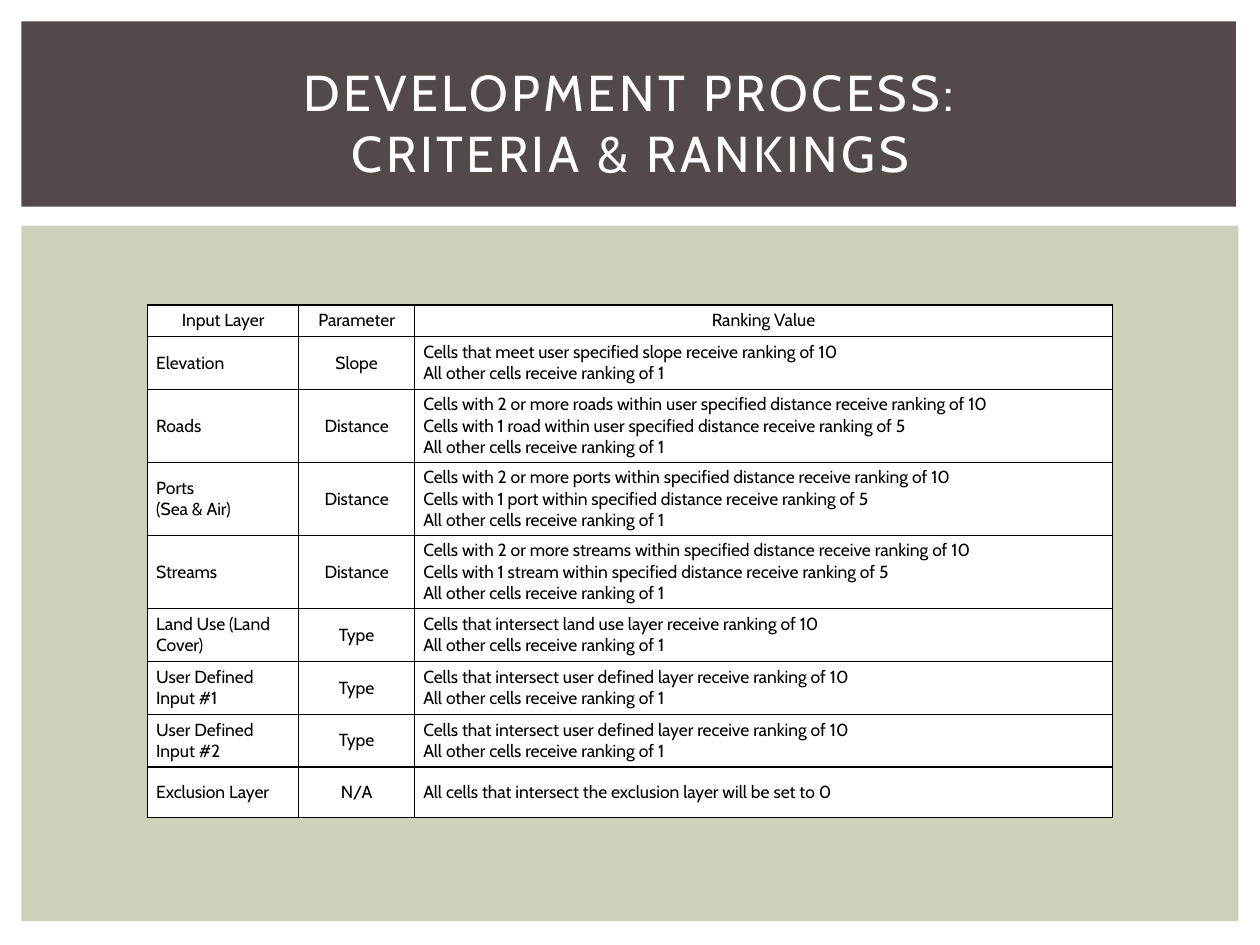
"""Build the criteria and rankings slide."""
from lxml.etree import SubElement
from pptx import Presentation
from pptx.dml.color import RGBColor
from pptx.enum.shapes import MSO_SHAPE as Preset
from pptx.enum.text import MSO_ANCHOR as Anchor, PP_ALIGN as Align
from pptx.oxml.ns import qn
from pptx.util import Inches, Pt


def colour(code):
    return RGBColor.from_string(code)


def write(frame, text, size=10, ink="000000", align=Align.LEFT, after=0, tracking=0):
    frame.word_wrap = True
    frame.vertical_anchor = Anchor.MIDDLE
    frame.text = text
    for paragraph in frame.paragraphs:
        paragraph.alignment = align
        paragraph.space_after = Pt(after)
        for run in paragraph.runs:
            run.font.size = Pt(size)
            run.font.name = "Cabin"
            run.font.color.rgb = colour(ink)
            if tracking:
                run._r.get_or_add_rPr().set("spc", str(tracking * 100))


deck = Presentation()
deck.slide_width, deck.slide_height = Inches(10), Inches(7.5)
slide = deck.slides.add_slide(deck.slide_layouts[6])

panels = [
    ((0.17, 1.79, 9.66, 5.52), "CCD1B9"),
    ((0.17, 0.17, 9.64, 1.47), "534949"),
]
for bounds, shade in panels:
    panel = slide.shapes.add_shape(Preset.RECTANGLE, *map(Inches, bounds))
    panel.shadow.inherit = False
    panel.fill.solid()
    panel.fill.fore_color.rgb = colour(shade)
    panel.line.fill.background()

OTHERS = "All other cells receive ranking of 1"
USER_LAYER = f"Cells that intersect user defined layer receive ranking of 10\n{OTHERS}"
COUNTED = (
    "Cells with 2 or more {0}s within {1}specified distance receive ranking of 10\n"
    "Cells with 1 {0} within {1}specified distance receive ranking of 5\n" + OTHERS
)
criteria = [
    (0.25, "Input Layer", "Parameter", "Ranking Value"),
    (0.42, "Elevation", "Slope", f"Cells that meet user specified slope receive ranking of 10\n{OTHERS}"),
    (0.58, "Roads", "Distance", COUNTED.format("road", "user ")),
    (0.58, "Ports\n(Sea & Air)", "Distance", COUNTED.format("port", "")),
    (0.58, "Streams", "Distance", COUNTED.format("stream", "")),
    (0.42, "Land Use (Land Cover)", "Type", f"Cells that intersect land use layer receive ranking of 10\n{OTHERS}"),
    (0.42, "User Defined Input #1", "Type", USER_LAYER),
    (0.42, "User Defined Input #2", "Type", USER_LAYER),
    (0.4, "Exclusion Layer", "N/A", "All cells that intersect the exclusion layer will be set to 0"),
]
widths = [1.2, 0.92, 5.54]
total_height = sum(height for height, *_ in criteria)
rankings = slide.shapes.add_table(
    len(criteria), len(widths), Inches(1.17), Inches(2.42), Inches(sum(widths)), Inches(total_height)
).table
rankings.first_row = rankings.horz_banding = False
for column, width in zip(rankings.columns, widths):
    column.width = Inches(width)

for row, (height, *entries) in enumerate(criteria):
    rankings.rows[row].height = Inches(height)
    for column, entry in enumerate(entries):
        cell = rankings.cell(row, column)
        cell.margin_left = cell.margin_right = Inches(0.07)
        cell.margin_top = cell.margin_bottom = 0
        cell.vertical_anchor = Anchor.MIDDLE
        heading = row == 0
        centred = heading or column == 1
        write(cell.text_frame, entry, align=Align.CENTER if centred else Align.LEFT, after=6 if heading else 0)
        for side in ("a:lnL", "a:lnR", "a:lnT", "a:lnB"):
            border = SubElement(cell._tc.get_or_add_tcPr(), qn(side), w=str(Pt(1)))
            SubElement(SubElement(border, qn("a:solidFill")), qn("a:srgbClr"), val="000000")
        cell.fill.solid()
        cell.fill.fore_color.rgb = colour("FFFFFF")

title = slide.shapes.add_textbox(*map(Inches, (0.42, 0.39, 9.17, 1.15)))
write(
    title.text_frame, "DEVELOPMENT PROCESS:\vCRITERIA & RANKINGS",
    size=28.8, ink="FFFFFF", align=Align.CENTER, tracking=2,
)

deck.save("out.pptx")
